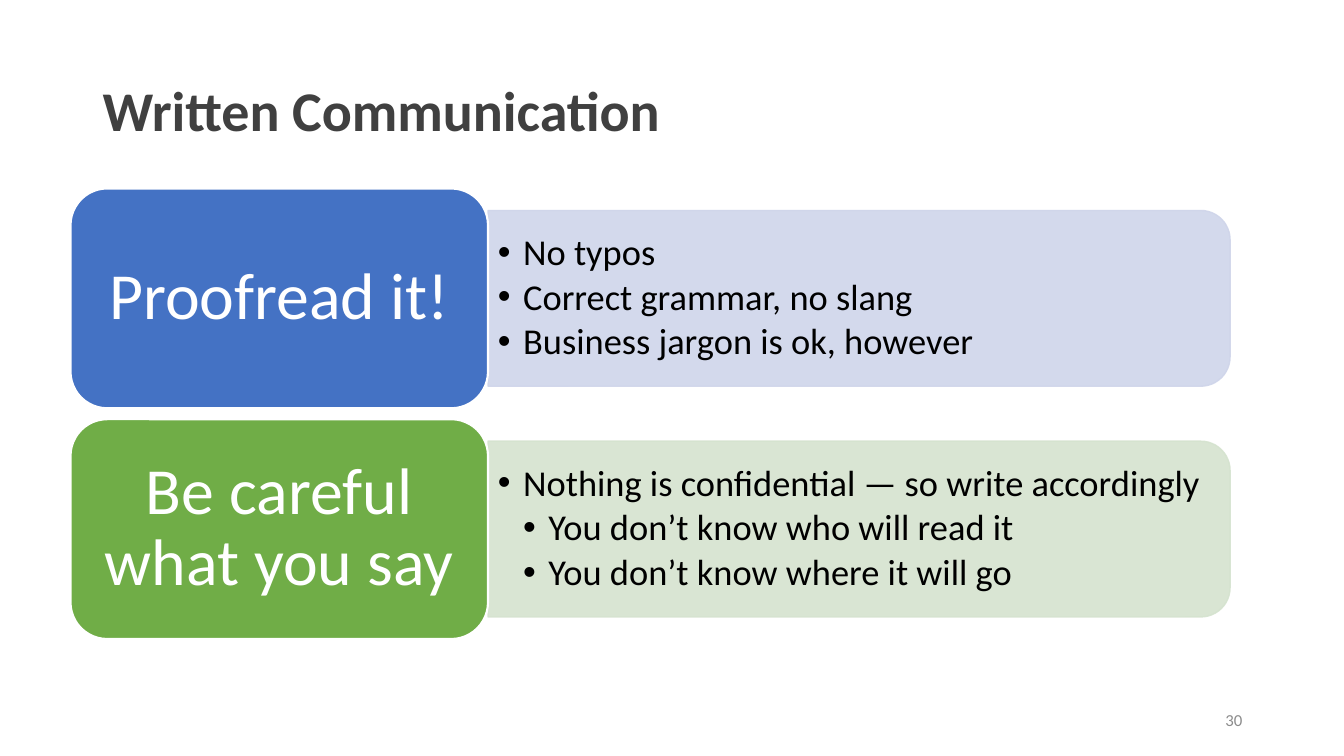
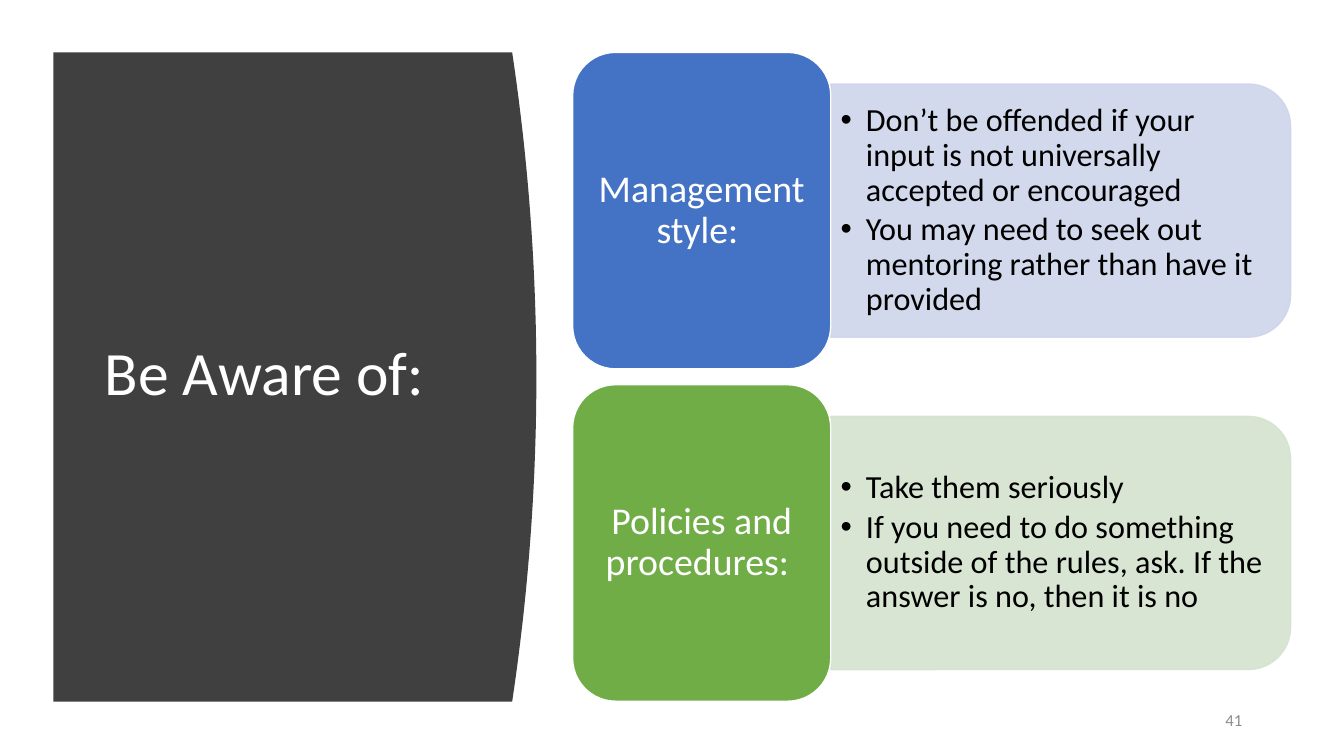
import lxml.etree
import pptx
import pptx.dml.color
import pptx.enum.shapes
import pptx.enum.text
import pptx.oxml.ns
import pptx.util

Inches = pptx.util.Inches
Pt = pptx.util.Pt
RGBColor = pptx.dml.color.RGBColor
Shape = pptx.enum.shapes.MSO_SHAPE
Align = pptx.enum.text.PP_ALIGN
qn = pptx.oxml.ns.qn

WHITE = RGBColor(0xFF, 0xFF, 0xFF)
BLACK = RGBColor(0, 0, 0)
CHARCOAL = RGBColor(0x40, 0x40, 0x40)
GRAY = RGBColor(0x8C, 0x8C, 0x8C)
BLUE = RGBColor(0x44, 0x72, 0xC4)
GREEN = RGBColor(0x70, 0xAD, 0x47)
PALE_BLUE = RGBColor(0xCF, 0xD5, 0xEA)
PALE_GREEN = RGBColor(0xD5, 0xE3, 0xCF)

FONT = "Calibri"
LINE_SPACING = 0.9
ROW_COLORS = [(BLUE, PALE_BLUE), (GREEN, PALE_GREEN)]


class SlideWriter:
    def __init__(self, deck):
        self.deck = deck
        self.slide = None

    def new_slide(self, number):
        self.slide = self.deck.slides.add_slide(self.deck.slide_layouts[6])
        self.text(11.42, 6.95, 1, 0.4, str(number), 12, GRAY, align=Align.RIGHT)

    def frame(self, shape, inset_x=0.1, inset_y=0.05):
        frame = shape.text_frame
        frame.word_wrap = True
        frame.vertical_anchor = pptx.enum.text.MSO_ANCHOR.MIDDLE
        frame.margin_left = frame.margin_right = Inches(inset_x)
        frame.margin_top = frame.margin_bottom = Inches(inset_y)
        return frame

    def style(self, paragraph, size, color, bold=False, align=Align.LEFT):
        paragraph.alignment = align
        paragraph.line_spacing = LINE_SPACING
        font = paragraph.font
        font.name = FONT
        font.size = Pt(size)
        font.bold = bold
        font.color.rgb = color

    def box(self, left, top, width, height):
        return self.slide.shapes.add_textbox(
            Inches(left), Inches(top), Inches(width), Inches(height))

    def text(self, left, top, width, height, words, size, color,
             bold=False, align=Align.LEFT):
        paragraph = self.frame(self.box(left, top, width, height)).paragraphs[0]
        paragraph.text = words
        self.style(paragraph, size, color, bold, align)

    def shape(self, kind, left, top, width, height, fill, line, line_width):
        shape = self.slide.shapes.add_shape(
            kind, Inches(left), Inches(top), Inches(width), Inches(height))
        shape.shadow.inherit = False
        shape.fill.solid()
        shape.fill.fore_color.rgb = fill
        shape.line.color.rgb = line
        shape.line.width = Pt(line_width)
        return shape

    def panel(self, left, middle, width, height, color):
        shape = self.shape(
            Shape.ROUND_2_SAME_RECTANGLE, left + (width - height) / 2,
            middle - width / 2, height, width, color, color, 1)
        shape.rotation = 90
        for tint in shape._element.spPr.iter(qn("a:srgbClr")):
            lxml.etree.SubElement(tint, qn("a:alpha"), val="90000")

    def bullets(self, left, middle, width, height, items, size):
        frame = self.frame(self.box(left, middle - height / 2, width, height))
        for index, (level, words) in enumerate(items):
            paragraph = frame.add_paragraph() if index else frame.paragraphs[0]
            paragraph.text = words
            properties = paragraph._p.get_or_add_pPr()
            properties.set("marL", str(Inches(0.25 * level)))
            properties.set("indent", str(Inches(-0.25)))
            lxml.etree.SubElement(properties, qn("a:buFont"), typeface="Arial")
            lxml.etree.SubElement(properties, qn("a:buChar"), char="•")
            self.style(paragraph, size, BLACK)
            if index:
                paragraph.space_before = Pt(0.15 * size)

    def card(self, left, top, width, height, words, size, color, line_width):
        shape = self.shape(Shape.ROUNDED_RECTANGLE, left, top, width, height,
                           color, WHITE, line_width)
        paragraph = self.frame(shape, size / 240, size / 480).paragraphs[0]
        paragraph.text = words
        self.style(paragraph, size, WHITE, align=Align.CENTER)

    def rows(self, left, top, card_width, card_height, panel_width,
             card_size, bullet_size, line_width, rows):
        panel_left = left + card_width
        panel_height = 0.8 * card_height
        for index, (heading, items) in enumerate(rows):
            color, pale = ROW_COLORS[index]
            row_top = top + index * 1.05 * card_height
            middle = row_top + card_height / 2
            self.panel(panel_left, middle, panel_width, panel_height, pale)
            self.bullets(panel_left, middle, panel_width - 0.05 * panel_height,
                         0.9 * panel_height, items, bullet_size)
            self.card(left, row_top, card_width, card_height, heading,
                      card_size, color, line_width)

    def curved_band(self, left, top, edge, bottom, bulge, steps=40):
        points = [(left, top)]
        for step in range(steps + 1):
            share = step / steps
            points.append((edge + bulge * 4 * share * (1 - share),
                           top + (bottom - top) * share))
        points.append((left, bottom))
        corners = [(Inches(x), Inches(y)) for x, y in points]
        builder = self.slide.shapes.build_freeform(*corners[0])
        builder.add_line_segments(corners[1:], close=True)
        band = builder.convert_to_shape()
        band.shadow.inherit = False
        band.fill.solid()
        band.fill.fore_color.rgb = CHARCOAL
        band.line.fill.background()


def main():
    deck = pptx.Presentation()
    deck.slide_width = Inches(13.33)
    deck.slide_height = Inches(7.5)
    writer = SlideWriter(deck)

    writer.new_slide(30)
    writer.text(0.92, 0.4, 11.5, 1.45, "Written Communication", 40, CHARCOAL, bold=True)
    writer.rows(0.7, 1.87, 4.14, 2.18, 7.36, 47, 26, 1.5, [
        ("Proofread it!", [
            (1, "No typos"),
            (1, "Correct grammar, no slang"),
            (1, "Business jargon is ok, however")]),
        ("Be careful what you say", [
            (1, "Nothing is confidential — so write accordingly"),
            (2, "You don’t know who will read it"),
            (2, "You don’t know where it will go")]),
    ])

    writer.new_slide(41)
    writer.curved_band(0.53, 0.52, 5.08, 6.96, 0.24)
    writer.text(0.94, 1.11, 3.74, 5.24, "Be Aware of:", 44, WHITE)
    writer.rows(5.68, 0.52, 2.56, 3.14, 4.56, 27, 23, 1, [
        ("Management style: ", [
            (1, "Don’t be offended if your input is not universally accepted or encouraged"),
            (1, "You may need to seek out mentoring rather than have it provided")]),
        ("Policies and procedures: ", [
            (1, "Take them seriously"),
            (1, "If you need to do something outside of the rules, ask. "
                "If the answer is no, then it is no")]),
    ])

    deck.save("out.pptx")


if __name__ == "__main__":
    main()
